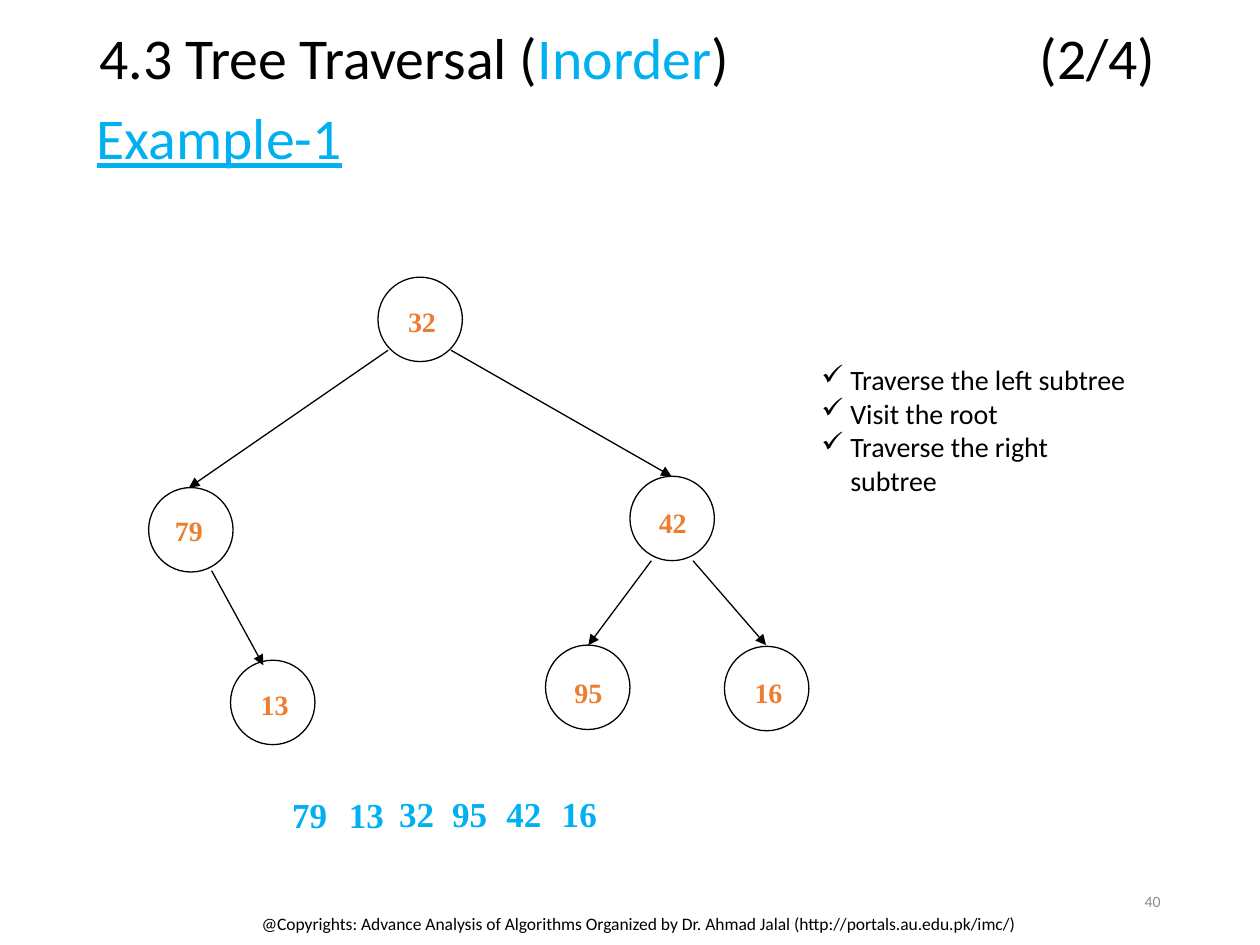
import pptx
import pptx.dml.color
import pptx.enum.shapes
import pptx.enum.text
import pptx.oxml
import pptx.oxml.ns
import pptx.util

Inches = pptx.util.Inches
Pt = pptx.util.Pt
RGBColor = pptx.dml.color.RGBColor
PP_ALIGN = pptx.enum.text.PP_ALIGN
MSO_ANCHOR = pptx.enum.text.MSO_ANCHOR
MSO_AUTO_SIZE = pptx.enum.text.MSO_AUTO_SIZE

BLACK = RGBColor(0x00, 0x00, 0x00)
BLUE = RGBColor(0x00, 0xB0, 0xF0)
ORANGE = RGBColor(0xED, 0x7D, 0x31)
GREY = RGBColor(0x8C, 0x8C, 0x8C)

HEADING = {"size": Pt(33), "name": "Calibri"}
KEY = {"size": Pt(16), "name": "Times New Roman", "bold": True}
VISIT = {"size": Pt(20), "name": "Times New Roman", "bold": True}
STEP = {"size": Pt(16), "name": "Calibri"}
FOOTER = {"size": Pt(10), "name": "Calibri"}
PAGE = {"size": Pt(9), "name": "Calibri"}

NODE_SIZE = 0.67
NODES = [
    ("32", (3, 2.2), (3.14, 2.37)),
    ("95", (4.33, 5.12), (4.46, 5.31)),
    ("16", (5.75, 5.13), (5.89, 5.31)),
    ("79", (1.18, 3.87), (1.29, 4.03)),
    ("13", (1.83, 5.24), (1.97, 5.41)),
    ("42", (5, 3.78), (5.13, 3.96)),
]
EDGES = [
    (1.68, 4.53, 2.09, 5.28),
    (5.17, 4.45, 4.67, 5.12),
    (5.5, 4.45, 6.08, 5.12),
    (3.08, 2.78, 1.5, 3.87),
    (3.58, 2.78, 5.33, 3.78),
]
INORDER = [
    ("79", 2.22, 6.25),
    ("13", 2.67, 6.25),
    ("32", 3.07, 6.24),
    ("95", 3.49, 6.24),
    ("42", 3.92, 6.24),
    ("16", 4.36, 6.24),
]
STEPS = ["Traverse the left subtree", "Visit the root", "Traverse the right subtree"]
COPYRIGHT = (
    "@Copyrights: Advance Analysis of Algorithms Organized by "
    "Dr. Ahmad Jalal (http://portals.au.edu.pk/imc/)"
)


def format_font(font, values, color):
    """Apply a dict of font values and a colour."""
    for key, value in values.items():
        setattr(font, key, value)
    font.color.rgb = color


def add_run(paragraph, text, values, color):
    """Append one formatted run to a paragraph."""
    run = paragraph.add_run()
    run.text = text
    format_font(run.font, values, color)


def add_label(shapes, box, text, values, color, align=PP_ALIGN.LEFT,
              anchor=MSO_ANCHOR.TOP, wrap=True):
    """Add a text box holding one line of text."""
    label = shapes.add_textbox(*map(Inches, box))
    frame = label.text_frame
    frame.word_wrap = wrap
    frame.vertical_anchor = anchor
    paragraph = frame.paragraphs[0]
    paragraph.alignment = align
    add_run(paragraph, text, values, color)
    return label


def add_title(slide):
    """Fill the title, with the part number at a right tab."""
    title = slide.shapes.title
    box = {"left": 0.69, "top": 0, "width": 8.62, "height": 0.96}
    for key, value in box.items():
        setattr(title, key, Inches(value))
    frame = title.text_frame
    frame.auto_size = MSO_AUTO_SIZE.NONE
    frame.vertical_anchor = MSO_ANCHOR.MIDDLE
    paragraph = frame.paragraphs[0]
    paragraph.alignment = PP_ALIGN.LEFT
    paragraph.line_spacing = 0.9
    properties = paragraph._p.get_or_add_pPr()
    tabs = pptx.oxml.parse_xml(
        f'<a:tabLst {pptx.oxml.ns.nsdecls("a")}>'
        f'<a:tab pos="{Inches(8.38)}" algn="r"/></a:tabLst>'
    )
    properties.append(tabs)
    parts = [("4.3 Tree Traversal (", BLACK), ("Inorder", BLUE), (")\t(2/4)", BLACK)]
    for text, color in parts:
        add_run(paragraph, text, HEADING, color)


def add_node(shapes, key, corner, key_corner):
    """Add a tree node circle and its key."""
    circle = shapes.add_shape(
        pptx.enum.shapes.MSO_SHAPE.OVAL,
        *map(Inches, (*corner, NODE_SIZE, NODE_SIZE)),
    )
    circle.shadow.inherit = False
    circle.fill.background()
    circle.line.color.rgb = BLACK
    circle.line.width = Pt(0.75)
    add_label(shapes, (*key_corner, 0.42, 0.37), key, KEY, ORANGE, wrap=False)


def add_edge(shapes, ends):
    """Add an arrow from a parent node to a child node."""
    edge = shapes.add_connector(
        pptx.enum.shapes.MSO_CONNECTOR.STRAIGHT, *map(Inches, ends)
    )
    edge.line.color.rgb = BLACK
    edge.line.width = Pt(0.75)
    namespace = pptx.oxml.ns.nsdecls("a")
    edge.line._get_or_add_ln().append(
        pptx.oxml.parse_xml(f'<a:tailEnd {namespace} type="triangle"/>')
    )
    edge._element.spPr.append(pptx.oxml.parse_xml(f"<a:effectLst {namespace}/>"))


def add_steps(shapes):
    """Add the check-marked list of traversal steps."""
    steps = shapes.add_textbox(*map(Inches, (6.42, 2.83, 2.72, 0.91)))
    frame = steps.text_frame
    frame.word_wrap = True
    for index, text in enumerate(STEPS):
        paragraph = frame.add_paragraph() if index else frame.paragraphs[0]
        properties = paragraph._p.get_or_add_pPr()
        properties.set("marL", str(Inches(0.23)))
        properties.set("indent", str(-Inches(0.23)))
        properties.append(
            pptx.oxml.parse_xml(f'<a:buChar {pptx.oxml.ns.nsdecls("a")} char="✓"/>')
        )
        add_run(paragraph, text, STEP, BLACK)


def main():
    """Build the inorder traversal slide."""
    deck = pptx.Presentation()
    deck.slide_width, deck.slide_height = Inches(10), Inches(7.5)
    slide = deck.slides.add_slide(deck.slide_layouts[5])
    shapes = slide.shapes
    add_title(slide)
    example = add_label(shapes, (0.67, 0.64, 2.23, 0.96), "Example-1",
                        {**HEADING, "underline": True}, BLUE,
                        anchor=MSO_ANCHOR.MIDDLE)
    example.text_frame.paragraphs[0].line_spacing = 0.9
    tree = shapes.add_group_shape().shapes
    for node in NODES:
        add_node(tree, *node)
    for ends in EDGES:
        add_edge(tree, ends)
    add_steps(shapes)
    for key, left, top in INORDER:
        add_label(shapes, (left, top, 0.48, 0.44), key, VISIT, BLUE, wrap=False)
    add_label(shapes, (7.06, 6.95, 2.25, 0.4), "40", PAGE, GREY,
              PP_ALIGN.RIGHT, MSO_ANCHOR.MIDDLE)
    add_label(shapes, (1.68, 7.2, 6.77, 0.3), COPYRIGHT, FOOTER, BLACK,
              PP_ALIGN.CENTER)
    deck.save("out.pptx")


if __name__ == "__main__":
    main()
